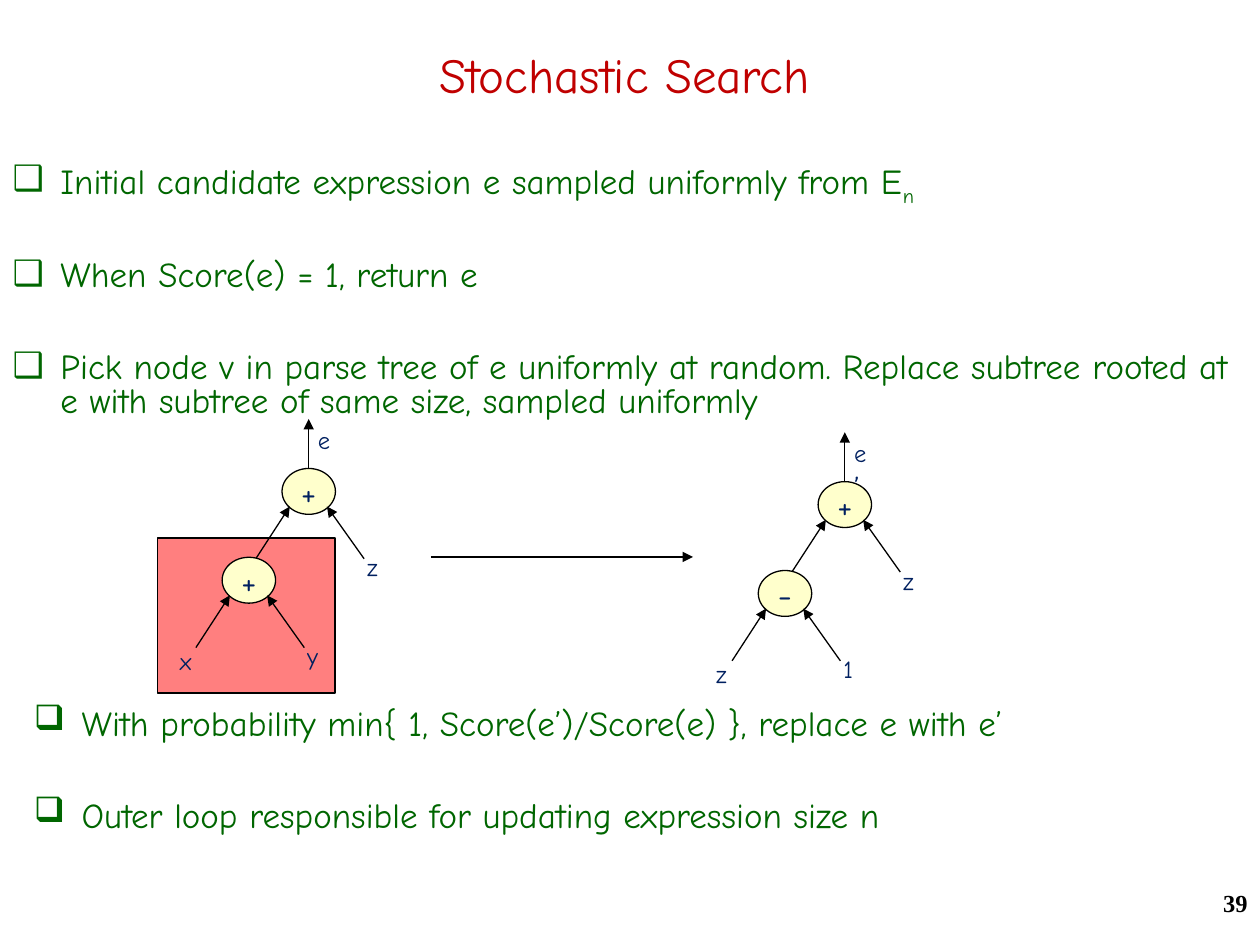
from lxml.etree import SubElement
from pptx import Presentation
from pptx.dml.color import RGBColor
from pptx.enum.shapes import MSO_CONNECTOR as Link, MSO_SHAPE as Shape
from pptx.enum.text import MSO_ANCHOR as Anchor, MSO_AUTO_SIZE as AutoSize, PP_ALIGN as Align
from pptx.oxml.ns import qn
from pptx.util import Inches, Pt

COLORS = {"title": "C00000", "body": "006600", "label": "002060",
          "ink": "000000", "node": "FFFFCC", "subtree": "FF0000"}
HAND, SERIF = "Comic Neue", "Times New Roman"
COLUMNS, ROWS = 100, 75
BULLET_GAP = 33.5  # points between bullets


def color(name):
    return RGBColor.from_string(COLORS[name])


class Sheet:
    """Holds the style and the current slide; lengths are grid columns and rows."""

    def __init__(self, deck):
        self.column = deck.slide_width / COLUMNS
        self.row = deck.slide_height / ROWS
        self.page = deck.slides.add_slide(deck.slide_layouts[1])

    def area(self, left, top, width, height):
        return (round(left * self.column), round(top * self.row),
                round(width * self.column), round(height * self.row))

    def place(self, shape, *area):
        shape.left, shape.top, shape.width, shape.height = self.area(*area)
        shape.text_frame.auto_size = AutoSize.NONE
        return shape

    def style(self, para, size, name, face=HAND, align=Align.LEFT, bold=False):
        para.alignment = align
        font = para.font
        font.size, font.name, font.bold = Pt(size), face, bold
        font.color.rgb = color(name)

    def title(self, text, *area):
        frame = self.place(self.page.shapes.title, *area).text_frame
        frame.vertical_anchor = Anchor.MIDDLE
        frame.text = text
        self.style(frame.paragraphs[0], 28, "title", align=Align.CENTER)

    def textbox(self, *area):
        box = self.page.shapes.add_textbox(*self.area(*area))
        box.text_frame.word_wrap = True
        return box

    def text(self, text, area, size, name, **look):
        box = self.textbox(*area)
        para = box.text_frame.paragraphs[0]
        para.text = text
        self.style(para, size, name, **look)
        return para

    def bullets(self, frame, items, lead):
        """Fill a frame with bullets; lead is the space above the first one."""
        for number, item in enumerate(items):
            para = frame.add_paragraph() if number else frame.paragraphs[0]
            para.text = item
            para.line_spacing = 0.8
            para.space_before = Pt(BULLET_GAP if number else lead)
            props = para._p.get_or_add_pPr()
            props.set("marL", str(Inches(0.38)))
            props.set("indent", str(-Inches(0.38)))
            tint = SubElement(props, qn("a:buClr"))
            SubElement(tint, qn("a:srgbClr"), val=COLORS["body"])
            SubElement(props, qn("a:buChar"), char="❑")
            self.style(para, 20, "body")

    def shape(self, kind, area, fill):
        shape = self.page.shapes.add_shape(kind, *self.area(*area))
        shape.shadow.inherit = False
        shape.fill.solid()
        shape.fill.fore_color.rgb = color(fill)
        shape.line.color.rgb = color("ink")
        shape.line.width = Pt(0.75)
        return shape

    def highlight(self, *area):
        shape = self.shape(Shape.RECTANGLE, area, "subtree")
        tint = shape._element.spPr.find(qn("a:solidFill"))[0]
        SubElement(tint, qn("a:alpha"), val="50000")

    def arrow(self, x1, y1, x2, y2):
        start, end = self.area(x1, y1, x2, y2)[:2], self.area(x1, y1, x2, y2)[2:]
        arrow = self.page.shapes.add_connector(Link.STRAIGHT, *start, *end)
        arrow.line.color.rgb = color("ink")
        arrow.line.width = Pt(0.75)
        props = arrow._element.spPr
        SubElement(props.find(qn("a:ln")), qn("a:tailEnd"), type="triangle")
        SubElement(props, qn("a:effectLst"))
        return arrow

    def label(self, text, x, y):
        return self.text(text, (x, y, 2.7, 3), 14, "label")

    def node(self, sign, x, y, left=None, right=None):
        """An operator centred at x, y with an arrow from each operand."""
        oval = self.shape(Shape.OVAL, (x - 2.12, y - 1.82, 4.24, 3.64), "node")
        frame = oval.text_frame
        frame.word_wrap = False
        frame.vertical_anchor = Anchor.MIDDLE
        para = frame.paragraphs[0]
        para.text = sign
        self.style(para, 20, "label", align=Align.CENTER)
        self.arrow(x + 4.4, y + 5.35, x + 1.45, y + 1.2)
        self.arrow(x - 4.2, y + 5.35, x - 1.5, y + 1.2)
        if left:
            self.label(left, x - 6.45, y + 4.7)
        if right:
            self.label(right, x + 3.65, y + 4.35)
        return oval

    def tree(self, x, y, child, left, right):
        """A sum of a child operation and z, with its result arrow and name."""
        root = self.node("+", x, y, right="z")
        stem = self.arrow(x, y - 1.82, x, y - 5.75)
        stem.begin_connect(root, 0)
        self.node(child, x - 4.75, y + 7.05, left, right)
        return self.label("e", x - 0.25, y - 5.75)


def main():
    deck = Presentation()
    deck.slide_width, deck.slide_height = Inches(10), Inches(7.5)
    sheet = Sheet(deck)

    # Title and first steps
    sheet.title("Stochastic Search", 6.7, 2.5, 85.7, 6.7)
    body = sheet.place(sheet.page.placeholders[1], 0, 12.5, 100, 20.8)
    sheet.bullets(body.text_frame, [
        "Initial candidate expression e sampled uniformly from E",
        "When Score(e) = 1, return e",
        "Pick node v in parse tree of e uniformly at random. Replace subtree "
        "rooted at e with subtree of same size, sampled uniformly",
    ], lead=7)
    index = body.text_frame.paragraphs[0].add_run()
    index.text = "n"
    index._r.get_or_add_rPr().set("baseline", "-25000")

    # Parse trees before and after the replacement
    sheet.highlight(12.5, 42.7, 14.1, 12.3)
    sheet.tree(24.5, 39, "+", "x", "y")
    name = sheet.tree(67.05, 40.05, "-", "z", "1")
    prime = name.add_run()
    prime.text = "’"
    prime.font.size = Pt(18)
    sheet.arrow(34.2, 44.2, 55, 44.2)

    # Last steps
    closing = sheet.textbox(1.7, 55.8, 98.3, 17.5)
    sheet.bullets(closing.text_frame, [
        "With probability min{ 1, Score(e’)/Score(e) }, replace e with e’",
        "Outer loop responsible for updating expression size n",
    ], lead=35)

    # Page number
    sheet.text("39", (79.2, 70, 20.8, 5), 14, "ink",
               face=SERIF, align=Align.RIGHT, bold=True)
    deck.save("out.pptx")


if __name__ == "__main__":
    main()
